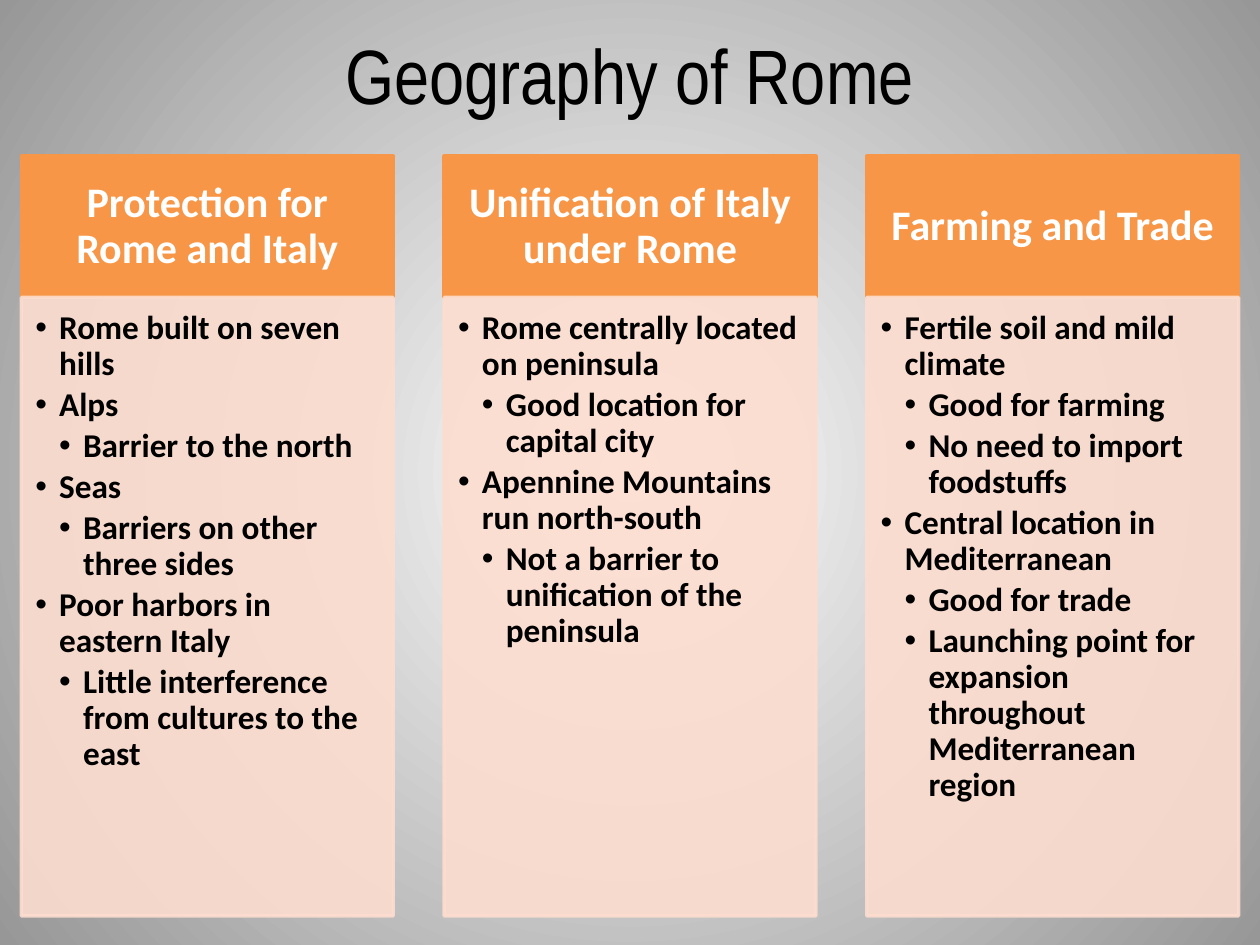
import pptx
import pptx.util
import pptx.dml.color
import pptx.enum.shapes
import pptx.enum.text
import pptx.oxml
import pptx.oxml.ns
import lxml.etree

Inches = pptx.util.Inches
Pt = pptx.util.Pt
qn = pptx.oxml.ns.qn
SubElement = lxml.etree.SubElement
RGBColor = pptx.dml.color.RGBColor
Anchor = pptx.enum.text.MSO_ANCHOR
Align = pptx.enum.text.PP_ALIGN

THEME = {
    "background": ("FFFFFF", "979797"),
    "title": {
        "color": "000000",
        "font": {"name": "Arial Narrow", "size": Pt(44), "bold": False},
        "frame": {"word_wrap": True, "vertical_anchor": Anchor.MIDDLE},
        "paragraph": {"alignment": Align.CENTER},
    },
    "header": {
        "fill": "F79646",
        "opacity": 100,
        "color": "FFFFFF",
        "font": {"name": "Calibri", "size": Pt(24), "bold": True},
        "frame": {
            "word_wrap": True, "vertical_anchor": Anchor.MIDDLE,
            "margin_left": Inches(0.19), "margin_right": Inches(0.19),
            "margin_top": Inches(0.11), "margin_bottom": Inches(0.11),
        },
        "paragraph": {"alignment": Align.CENTER, "line_spacing": 0.9},
    },
    "body": {
        "fill": "FCDDCF",
        "opacity": 90,
        "color": "000000",
        "font": {"name": "Calibri", "size": Pt(19), "bold": True},
        "frame": {
            "word_wrap": True, "vertical_anchor": Anchor.TOP,
            "margin_left": Inches(0.11), "margin_right": Inches(0.15),
            "margin_top": Inches(0.11), "margin_bottom": Inches(0.17),
        },
        "paragraph": {"alignment": Align.LEFT, "line_spacing": 0.9, "space_after": Pt(2.9)},
    },
}

COLUMNS = [
    ("Protection for Rome and Italy", [
        (1, "Rome built on seven hills"),
        (1, "Alps"),
        (2, "Barrier to the north"),
        (1, "Seas"),
        (2, "Barriers on other three sides"),
        (1, "Poor harbors in eastern Italy"),
        (2, "Little interference from cultures to the east"),
    ]),
    ("Unification of Italy under Rome", [
        (1, "Rome centrally located on peninsula"),
        (2, "Good location for capital city"),
        (1, "Apennine Mountains run north-south"),
        (2, "Not a barrier to unification of the peninsula"),
    ]),
    ("Farming and Trade", [
        (1, "Fertile soil and mild climate"),
        (2, "Good for farming"),
        (2, "No need to import foodstuffs"),
        (1, "Central location in Mediterranean"),
        (2, "Good for trade"),
        (2, "Launching point for expansion throughout Mediterranean region"),
    ]),
]
LEFT, PITCH, WIDTH = 0.17, 3.355, 2.95
HEADER_TOP, HEADER_HEIGHT, BODY_HEIGHT = 1.24, 1.12, 4.91
INDENT = 0.19


def write_text(shape, style, items):
    frame = shape.text_frame
    for name, value in style["frame"].items():
        setattr(frame, name, value)
    for index, (level, text) in enumerate(items):
        paragraph = frame.add_paragraph() if index else frame.paragraphs[0]
        for name, value in style["paragraph"].items():
            setattr(paragraph, name, value)
        run = paragraph.add_run()
        run.text = text
        for name, value in style["font"].items():
            setattr(run.font, name, value)
        run.font.color.rgb = RGBColor.from_string(style["color"])
        if level:
            paragraph.level = level
            properties = paragraph._p.get_or_add_pPr()
            properties.set("marL", str(Inches(INDENT * level)))
            properties.set("indent", str(-Inches(INDENT)))
            SubElement(properties, qn("a:buFont"), typeface="Arial")
            SubElement(properties, qn("a:buChar"), char="•")


def add_panel(slide, style, left, top, height, items):
    shape = slide.shapes.add_shape(
        pptx.enum.shapes.MSO_SHAPE.RECTANGLE,
        Inches(left), Inches(top), Inches(WIDTH), Inches(height))
    shape.shadow.inherit = False
    color = RGBColor.from_string(style["fill"])
    shape.fill.solid()
    shape.fill.fore_color.rgb = color
    shape.line.color.rgb = color
    shape.line.width = Pt(2)
    if style["opacity"] < 100:
        for node in list(shape.element.spPr.iter(qn("a:srgbClr"))):
            SubElement(node, qn("a:alpha"), val=str(style["opacity"] * 1000))
    write_text(shape, style, items)


presentation = pptx.Presentation()
presentation.slide_width = Inches(10)
presentation.slide_height = Inches(7.5)
slide = presentation.slides.add_slide(presentation.slide_layouts[6])

background = slide.background.fill
background.gradient()
for stop, color in zip(background.gradient_stops, THEME["background"]):
    stop.color.rgb = RGBColor.from_string(color)
linear = next(slide.element.iter(qn("a:lin")))
gradient = linear.getparent()
gradient.remove(linear)
radial = SubElement(gradient, qn("a:path"), path="circle")
SubElement(radial, qn("a:fillToRect"), {side: "50000" for side in "ltrb"})

title = slide.shapes.add_textbox(Inches(0.5), Inches(0), Inches(9), Inches(1.17))
write_text(title, THEME["title"], [(0, "Geography of Rome")])

for index, (heading, points) in enumerate(COLUMNS):
    left = LEFT + index * PITCH
    add_panel(slide, THEME["header"], left, HEADER_TOP, HEADER_HEIGHT, [(0, heading)])
    add_panel(slide, THEME["body"], left, HEADER_TOP + HEADER_HEIGHT, BODY_HEIGHT, points)

presentation.save("out.pptx")
